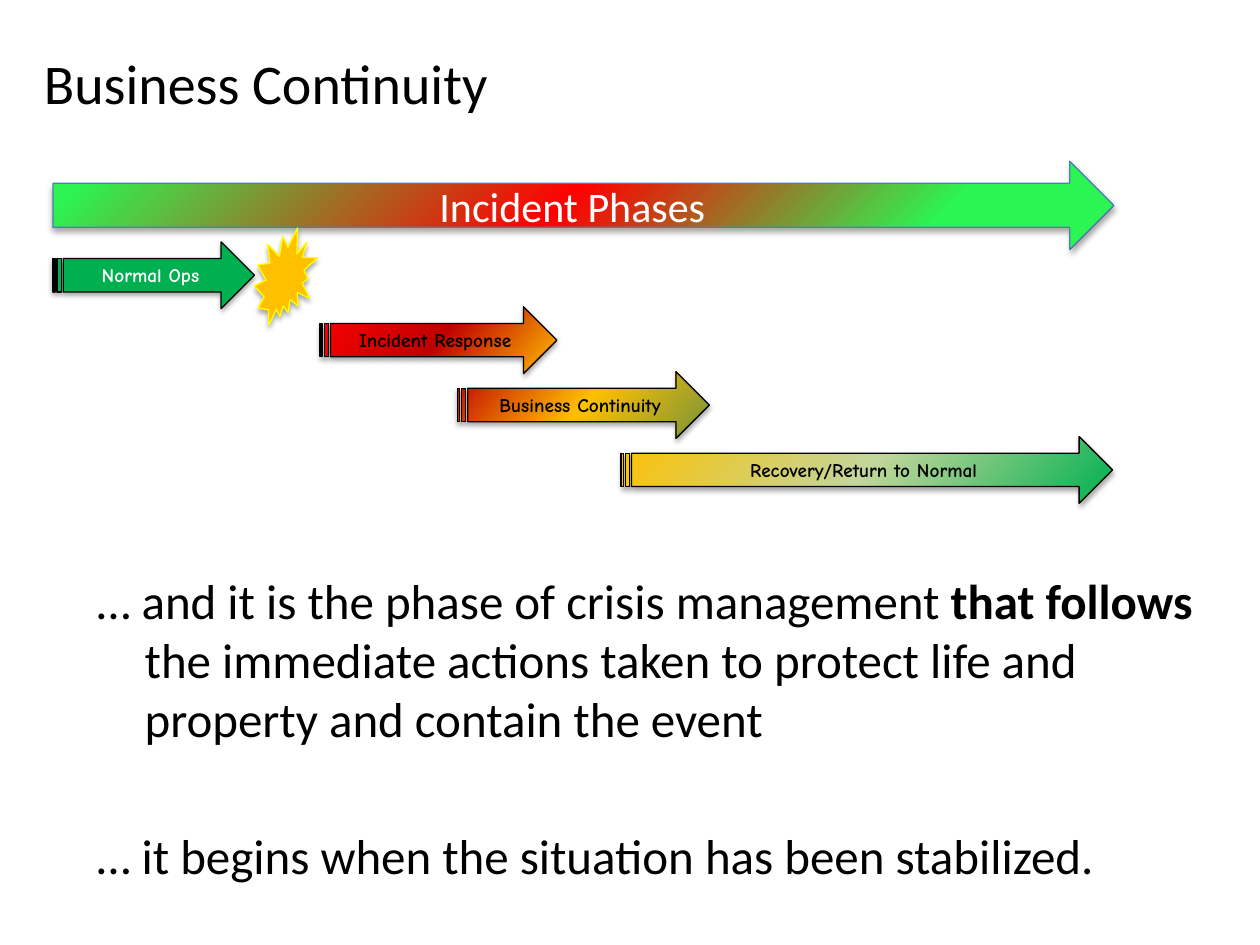
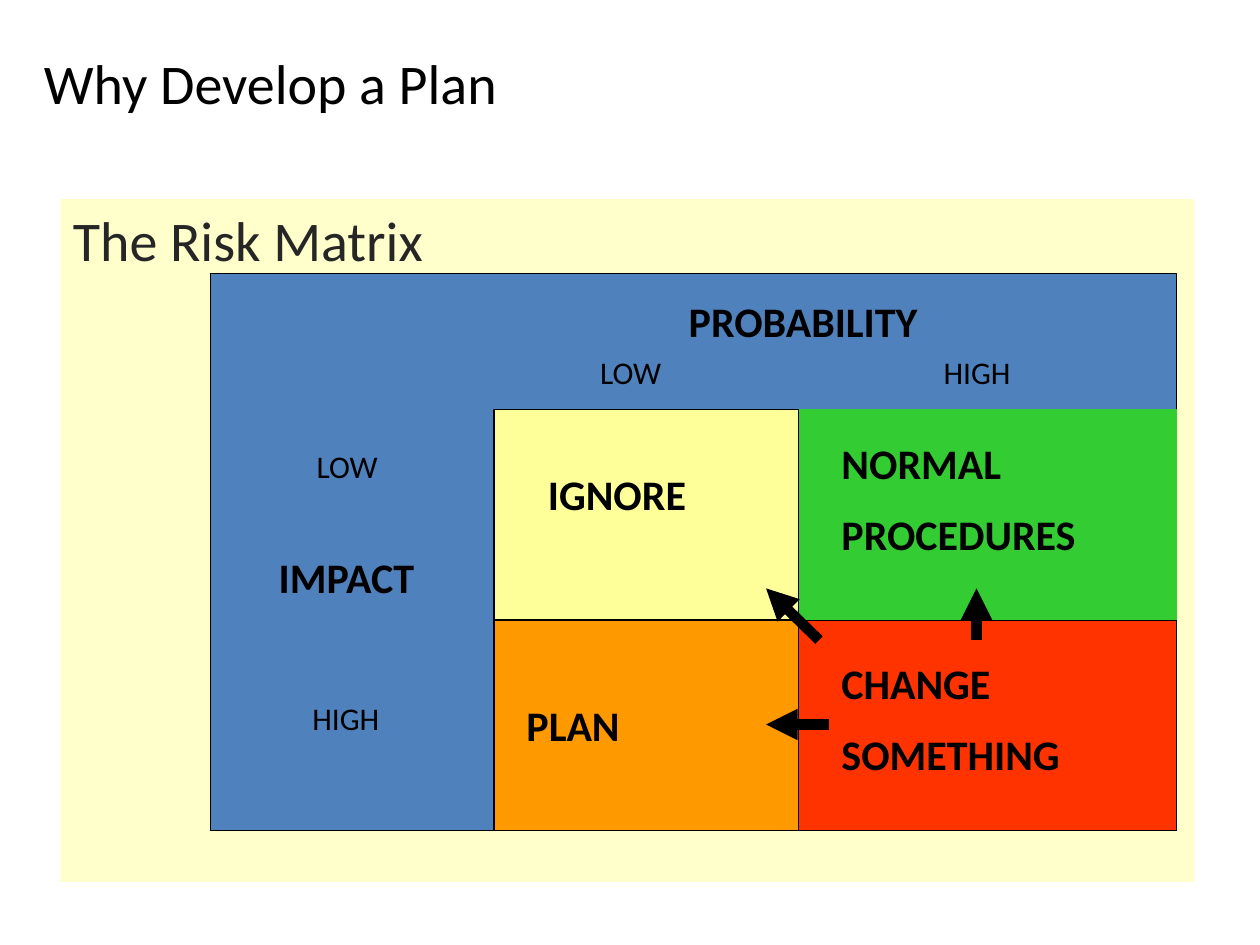
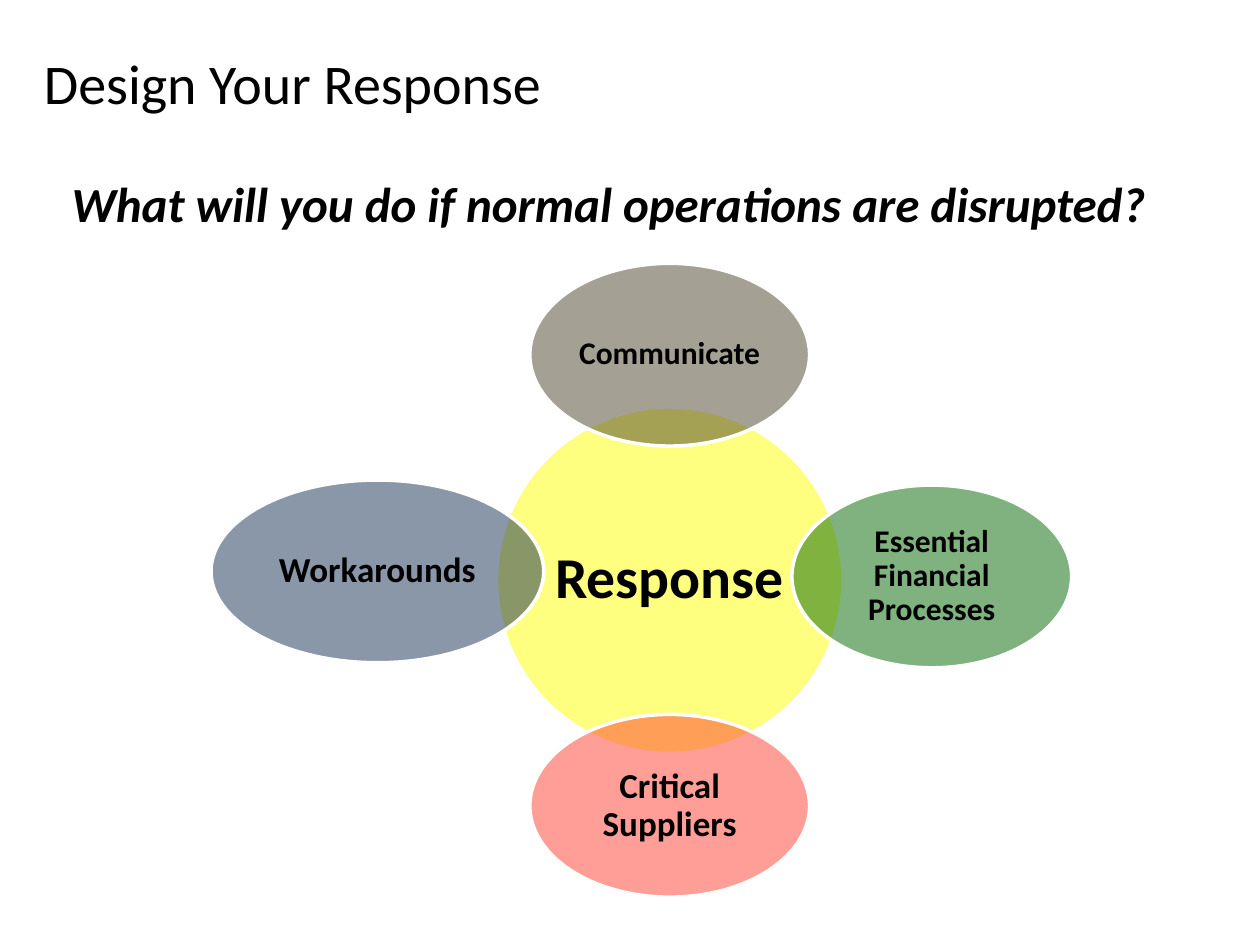
import collections
import copy

import pptx
import pptx.dml.color
import pptx.enum.shapes
import pptx.enum.text
import pptx.oxml
import pptx.oxml.ns
import pptx.util

Inches = pptx.util.Inches
Pt = pptx.util.Pt
qn = pptx.oxml.ns.qn
SHAPE = pptx.enum.shapes.MSO_SHAPE
ALIGN = pptx.enum.text.PP_ALIGN
ANCHOR = pptx.enum.text.MSO_ANCHOR

Box = collections.namedtuple("Box", "left top width height")

BODY_FONT = "Calibri"
ARROW_FONT = "Comic Neue"
BLACK = "000000"
WHITE = "FFFFFF"
GREEN = "00B050"
AMBER = "FFC000"
DARK_RED = "C00000"
TITLE_BOX = Box(0.25, 0.3, 7.33, 0.7)


def colour(value):
    return pptx.dml.color.RGBColor.from_string(value)


def add_child(parent, tag, **attributes):
    child = parent.makeelement(qn(tag), {})
    for name, value in attributes.items():
        child.set(name, str(value))
    parent.append(child)
    return child


def inside(outer, left, top, width, height):
    """Turn a place within the outer box into a place on the page."""
    return Box(outer.left + left, outer.top + top, width, height)


def write(shape, paragraphs, size=24, color=BLACK, font=BODY_FONT, bold=False,
          italic=False, align=ALIGN.LEFT, anchor=ANCHOR.TOP, before=0,
          line_spacing=None, hanging=0, margin=None):
    """Fill a shape with paragraphs, each a string or a list of (text, bold) spans."""
    frame = shape.text_frame
    frame.word_wrap = True
    frame.vertical_anchor = anchor
    if margin is not None:
        frame.margin_left = frame.margin_right = Inches(margin)
        frame.margin_top = frame.margin_bottom = Inches(margin)
    for index, content in enumerate(paragraphs):
        para = frame.add_paragraph() if index else frame.paragraphs[0]
        para.alignment = align
        if index:
            para.space_before = Pt(before)
        if line_spacing:
            para.line_spacing = line_spacing
        if hanging:
            properties = para._p.get_or_add_pPr()
            properties.set("marL", str(Inches(hanging)))
            properties.set("indent", str(-Inches(hanging)))
        spans = [(content, bold)] if isinstance(content, str) else content
        for words, strong in spans:
            span = para.add_run()
            span.text = words
            span.font.name = font
            span.font.size = Pt(size)
            span.font.bold = strong
            span.font.italic = italic
            span.font.color.rgb = colour(color)


def add_text(shapes, box, *paragraphs, **text_format):
    shape = shapes.add_textbox(*map(Inches, box))
    write(shape, paragraphs, **text_format)
    return shape


def paint_gradient(shape, stops, angle):
    shape.fill.gradient()
    stop_list = shape._element.spPr.find(qn("a:gradFill")).find(qn("a:gsLst"))
    while len(stop_list) < len(stops):
        stop_list.append(copy.deepcopy(stop_list[0]))
    for stop, (percent, value) in zip(shape.fill.gradient_stops, stops):
        stop.position = percent / 100
        stop.color.rgb = colour(value)
    shape.fill.gradient_angle = 360 - angle


def add_shape(shapes, kind, box, fill, line=None, line_width=0.75, angle=40, opacity=100):
    """Add a preset shape; fill is a hex string or a list of gradient stops."""
    shape = shapes.add_shape(kind, *map(Inches, box))
    shape.shadow.inherit = False
    if isinstance(fill, str):
        shape.fill.solid()
        shape.fill.fore_color.rgb = colour(fill)
        if opacity < 100:
            solid = shape._element.spPr.find(qn("a:solidFill"))
            add_child(solid[0], "a:alpha", val=opacity * 1000)
    else:
        paint_gradient(shape, fill, angle)
    if line:
        shape.line.color.rgb = colour(line)
        shape.line.width = Pt(line_width)
    else:
        shape.line.fill.background()
    return shape


def cast_shadow(shape):
    effects = shape._element.spPr.find(qn("a:effectLst"))
    shadow = add_child(effects, "a:outerShdw", blurRad=Pt(3.1), dist=Pt(1.8),
                       dir=90 * 60000, rotWithShape=0)
    add_child(add_child(shadow, "a:srgbClr", val=BLACK), "a:alpha", val=35000)


def add_arrow(shapes, start, end):
    arrow = shapes.add_connector(pptx.enum.shapes.MSO_CONNECTOR.STRAIGHT,
                                 *map(Inches, start + end))
    arrow.line.color.rgb = colour(BLACK)
    arrow.line.width = Pt(6)
    add_child(arrow.line._get_or_add_ln(), "a:tailEnd", type="triangle")
    add_child(arrow._element.spPr, "a:effectLst")


def add_page(deck, title):
    page = deck.slides.add_slide(deck.slide_layouts[6])
    add_text(page.shapes, TITLE_BOX, title, size=32, anchor=ANCHOR.MIDDLE)
    return page


def draw_phases(page, box):
    shapes = page.shapes.add_group_shape().shapes
    centred = {"align": ALIGN.CENTER, "anchor": ANCHOR.MIDDLE}

    timeline = add_shape(shapes, SHAPE.RIGHT_ARROW, inside(box, 0, 0, box.width, 0.7),
                         [(4, "2CF452"), (48, "FF0000"), (82, "2CF452")],
                         line="4B7EBC", angle=45)
    cast_shadow(timeline)
    write(timeline, ["Incident Phases"], color=WHITE, **centred)

    burst = add_shape(shapes, SHAPE.EXPLOSION2, inside(box, 1.6, 0.53, 0.5, 0.77),
                      AMBER, line="FFFF00")
    cast_shadow(burst)

    phases = [
        ("Normal Ops", 0, 1.6, GREEN, WHITE),
        ("Incident Response", 2.12, 1.88,
         [(0, "FF0000"), (50, DARK_RED), (100, AMBER)], BLACK),
        ("Business Continuity", 3.21, 2,
         [(0, DARK_RED), (50, AMBER), (100, "77933C")], BLACK),
        ("Recovery/Return to Normal", 4.51, 3.9,
         [(0, AMBER), (50, "C3D69B"), (100, GREEN)], BLACK),
    ]
    first_top, step = 0.64, 0.515
    for row, (name, left, width, fill, color) in enumerate(phases):
        phase = add_shape(shapes, SHAPE.STRIPED_RIGHT_ARROW,
                          inside(box, left, first_top + row * step, width, 0.53),
                          fill, line=BLACK)
        cast_shadow(phase)
        write(phase, [name], size=11, font=ARROW_FONT, bold=True, color=color, **centred)


def build_continuity(deck):
    page = add_page(deck, "Business Continuity")
    add_text(page.shapes, Box(0.67, 4.48, 9, 2.43),
             [("… and it is the phase of crisis management ", False),
              ("that follows ", True),
              ("the immediate actions taken to protect life and property "
               "and contain the event", False)],
             "… it begins when the situation has been stabilized.",
             size=28, hanging=0.38, before=45)
    draw_phases(page, Box(0.42, 1.28, 8.42, 2.71))


def draw_risk_matrix(page, box):
    shapes = page.shapes
    add_shape(shapes, SHAPE.RECTANGLE, box, "4F81BD", line=BLACK)

    lefts, widths = (2.25, 4.67), (2.42, 3)
    tops, row_height = (1.08, 2.75), 1.67
    cells = [
        (1, 1, "FF3300", BLACK),
        (0, 1, "33CC33", "33CC33"),
        (1, 0, "FF9900", BLACK),
        (0, 0, "FFFF99", BLACK),
    ]
    for row, column, fill, line in cells:
        add_shape(shapes, SHAPE.RECTANGLE,
                  inside(box, lefts[column], tops[row], widths[column], row_height),
                  fill, line=line)

    actions = [
        (["CHANGE", "SOMETHING"], 4.91, 3, 2.33, 1.1),
        (["NORMAL", "PROCEDURES"], 4.91, 1.25, 2.58, 1.1),
        (["IGNORE"], 2.58, 1.5, 1.75, 0.5),
        (["PLAN"], 2.41, 3.33, 1.75, 0.5),
    ]
    for lines, *place in actions:
        add_text(shapes, inside(box, *place), *lines, bold=True, before=12)

    axes = [("IMPACT", 0.08, 2.16, 2), ("PROBABILITY", 2.04, 0.13, 5.33)]
    for name, left, top, width in axes:
        add_text(shapes, inside(box, left, top, width, 0.5), name,
                 bold=True, align=ALIGN.CENTER)

    levels = [
        ("LOW", 0.5, 1.33, 1.17),
        ("HIGH", 0.41, 3.33, 1.33),
        ("LOW", 2.5, 0.58, 1.67),
        ("HIGH", 5.25, 0.58, 1.67),
    ]
    for name, left, top, width in levels:
        add_text(shapes, inside(box, left, top, width, 0.4), name,
                 size=18, align=ALIGN.CENTER)

    moves = [
        ((6.08, 2.91), (6.08, 2.5)),
        ((4.91, 3.58), (4.41, 3.58)),
        ((4.83, 2.91), (4.41, 2.5)),
    ]
    for start, end in moves:
        add_arrow(shapes, *((box.left + x, box.top + y) for x, y in (start, end)))


def build_risk(deck):
    page = add_page(deck, "Why Develop a Plan")
    panel = add_shape(page.shapes, SHAPE.RECTANGLE, Box(0.48, 1.58, 9, 5.42), "FFFFCC")
    write(panel, ["The Risk Matrix"], size=32, color="262626")
    draw_risk_matrix(page, Box(1.67, 2.17, 7.67, 4.42))


def draw_response(page, box):
    """Draw the hub in the box, with ovals placed around its centre."""
    shapes = page.shapes.add_group_shape().shapes
    oval_height = 1.45
    ovals = [
        ("Response", 0, 0, box.width, box.height, "FFFF00", 33, 0.05),
        ("Communicate", 0, -1.79, 2.22, oval_height, "4A452A", 18, 0.03),
        ("Essential Financial Processes", 2.08, -0.03, 2.22, oval_height,
         "006600", 18, 0.03),
        ("Critical Suppliers", 0, 1.79, 2.22, oval_height, "FE3F30", 20, 0.03),
        ("Workarounds", -2.32, -0.07, 2.64, oval_height, "153153", 20, 0.03),
    ]
    for name, across, down, width, height, fill, size, margin in ovals:
        place = inside(box, (box.width - width) / 2 + across,
                       (box.height - height) / 2 + down, width, height)
        oval = add_shape(shapes, SHAPE.OVAL, place, fill, line=WHITE,
                         line_width=2, opacity=50)
        write(oval, [name], size=size, bold=True, align=ALIGN.CENTER,
              anchor=ANCHOR.MIDDLE, line_spacing=0.9, margin=margin)


def build_response(deck):
    page = add_page(deck, "Design Your Response")
    add_text(page.shapes, Box(0.33, 1.42, 9, 0.7),
             "What will you do if normal operations are disrupted?",
             size=28, bold=True, italic=True, align=ALIGN.CENTER, line_spacing=0.8)
    draw_response(page, Box(3.94, 3.23, 2.75, 2.75))


def main():
    deck = pptx.Presentation()
    deck.slide_width = Inches(10)
    deck.slide_height = Inches(7.5)
    build_continuity(deck)
    build_risk(deck)
    build_response(deck)
    deck.save("out.pptx")


if __name__ == "__main__":
    main()
